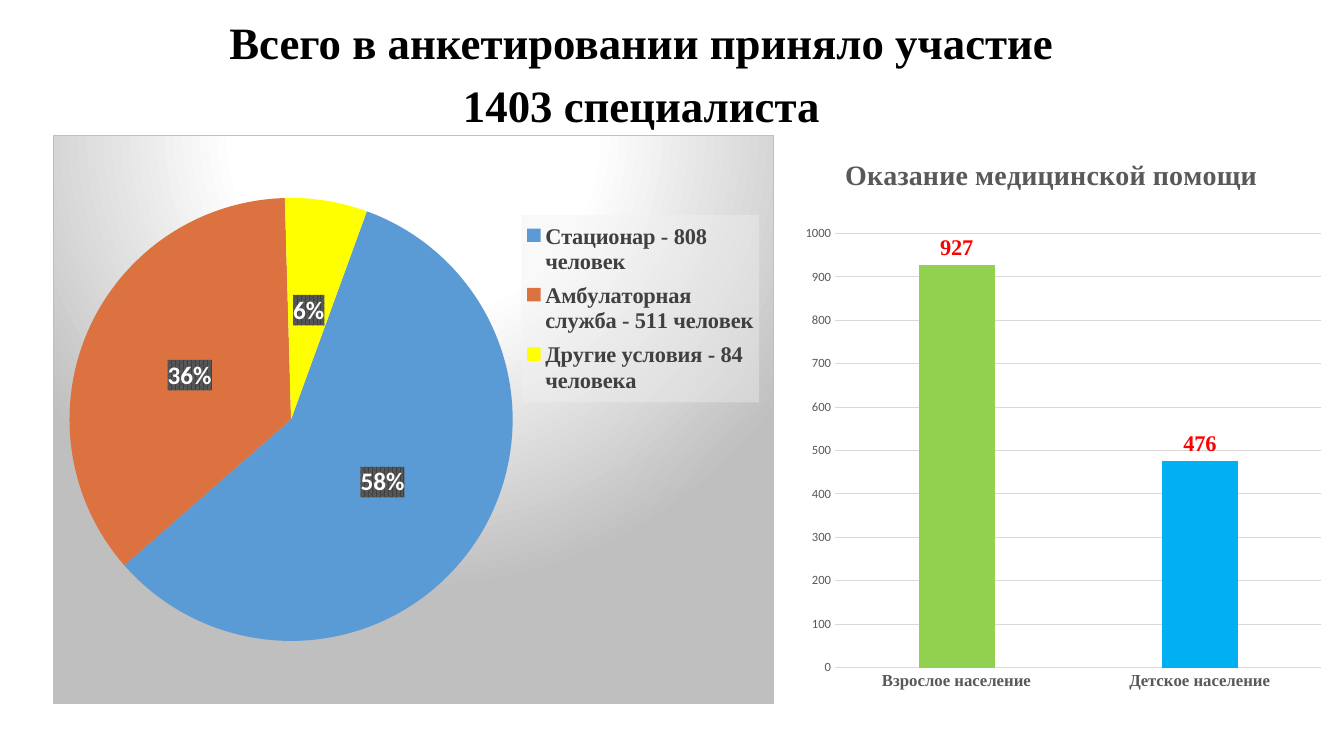
import pptx
import pptx.chart.data
import pptx.dml.color
import pptx.enum.chart
import pptx.enum.text
import pptx.oxml
import pptx.oxml.ns
import pptx.util

PX = 914400 / 100.8
SERIF = "Times New Roman"
NS = pptx.oxml.ns.nsdecls("a", "c")
NO_FRAME = "<a:noFill/><a:ln><a:noFill/></a:ln>"
PIE_FRAME = """<a:gradFill><a:gsLst>
<a:gs pos="0"><a:srgbClr val="FFFFFF"/></a:gs>
<a:gs pos="39000"><a:srgbClr val="FFFFFF"/></a:gs>
<a:gs pos="100000"><a:srgbClr val="BFBFBF"/></a:gs></a:gsLst>
<a:path path="circle"><a:fillToRect l="50000" t="-80000" r="50000" b="180000"/></a:path></a:gradFill>
<a:ln w="9525"><a:solidFill><a:srgbClr val="BFBFBF"/></a:solidFill></a:ln>"""
LABEL_FILL = """<a:pattFill prst="pct75"><a:fgClr><a:srgbClr val="404040"/></a:fgClr>
<a:bgClr><a:srgbClr val="595959"/></a:bgClr></a:pattFill>"""
LEGEND_FILL = """<a:solidFill><a:srgbClr val="F2F2F2">
<a:alpha val="39000"/></a:srgbClr></a:solidFill>"""


def px(n):
    return pptx.util.Emu(round(n * PX))


def rgb(value):
    return pptx.dml.color.RGBColor.from_string(value)


def set_font(font, size, color="000000", name=SERIF, bold=True):
    font.size, font.name, font.bold = pptx.util.Pt(size), name, bold
    font.color.rgb = rgb(color)


def set_fill(fill, color):
    fill.solid()
    fill.fore_color.rgb = rgb(color)


def set_line(line, color):
    line.color.rgb = rgb(color)
    line.width = pptx.util.Pt(0.75)


def add_sp_pr(parent, content):
    """Put shape properties just before the text properties of a chart part."""
    sp_pr = pptx.oxml.parse_xml(f"<c:spPr {NS}>{content}</c:spPr>")
    parent.find(pptx.oxml.ns.qn("c:txPr")).addprevious(sp_pr)


def make_layout(x, y, w, h, inner=False):
    """Manual layout in fractions of the chart's box."""
    target = '<c:layoutTarget val="inner"/>' if inner else ""
    return pptx.oxml.parse_xml(
        f'<c:layout {NS}><c:manualLayout>{target}<c:xMode val="edge"/><c:yMode val="edge"/>'
        f'<c:x val="{x}"/><c:y val="{y}"/><c:w val="{w}"/><c:h val="{h}"/>'
        "</c:manualLayout></c:layout>")


def add_chart(s, box, kind, values, colors, frame, plot_box):
    """Add a one-series chart with a colour for each point; values maps category to number."""
    data = pptx.chart.data.CategoryChartData()
    data.categories = list(values)
    data.add_series("Специалисты", list(values.values()))
    chart = s.shapes.add_chart(kind, *map(px, box), data).chart
    set_font(chart.font, 10, name="Calibri", bold=False)
    space = chart.element
    add_sp_pr(space, frame)
    if not space.xpath("c:roundedCorners"):
        space.xpath("c:chart")[0].addprevious(
            pptx.oxml.parse_xml(f'<c:roundedCorners {NS} val="0"/>'))
    area = space.xpath("c:chart/c:plotArea")[0]
    for old in area.xpath("c:layout"):
        area.remove(old)
    area.insert(0, make_layout(*plot_box, inner=True))
    for i, color in enumerate(colors):
        set_fill(chart.plots[0].series[0].points[i].format.fill, color)
    return chart


def add_heading(s, box, lines):
    sp = s.shapes.title
    sp.left, sp.top, sp.width, sp.height = map(px, box)
    tf = sp.text_frame
    tf.word_wrap = True
    tf.auto_size = pptx.enum.text.MSO_AUTO_SIZE.NONE
    tf.vertical_anchor = pptx.enum.text.MSO_ANCHOR.TOP
    for i, line in enumerate(lines):
        p = tf.add_paragraph() if i else tf.paragraphs[0]
        p.alignment = pptx.enum.text.PP_ALIGN.CENTER
        p.line_spacing = 0.9
        p.space_before = pptx.util.Pt(10)
        r = p.add_run()
        r.text = line
        set_font(r.font, 32)


def add_conditions_pie(s, box):
    values = {"Стационар - 808 человек": 58,
              "Амбулаторная служба - 511 человек": 36,
              "Другие условия - 84 человека": 6}
    chart = add_chart(s, box, pptx.enum.chart.XL_CHART_TYPE.PIE, values,
                      ["5B9BD5", "DC7240", "FFFF00"], PIE_FRAME, (0.02, 0.11, 0.62, 0.78))
    chart.has_title = False
    plot = chart.plots[0]
    plot.vary_by_categories = True
    pie = chart.element.xpath(".//c:pieChart")[0]
    for old in pie.xpath("c:firstSliceAng"):
        pie.remove(old)
    pie.append(pptx.oxml.parse_xml(f'<c:firstSliceAng {NS} val="20"/>'))

    labels = plot.series[0].data_labels
    set_font(labels.font, 18, "FFFFFF", "Calibri")
    labels.show_percentage, labels.show_value = True, False
    labels.number_format, labels.number_format_is_linked = "0%", False
    labels.position = pptx.enum.chart.XL_LABEL_POSITION.CENTER
    add_sp_pr(chart.element.xpath(".//c:ser/c:dLbls")[0], LABEL_FILL)

    chart.has_legend = True
    legend = chart.legend
    legend.position = pptx.enum.chart.XL_LEGEND_POSITION.RIGHT
    legend.include_in_layout = False
    set_font(legend.font, 16, "404040")
    element = chart.element.xpath(".//c:legend")[0]
    for old in element.xpath("c:layout"):
        element.remove(old)
    element.xpath("c:overlay")[0].addprevious(make_layout(0.65, 0.14, 0.33, 0.33))
    add_sp_pr(element, LEGEND_FILL)


def add_population_columns(s, box):
    values = {"Взрослое население": 927, "Детское население": 476}
    chart = add_chart(s, box, pptx.enum.chart.XL_CHART_TYPE.COLUMN_CLUSTERED, values,
                      ["92D050", "00B0F0"], NO_FRAME, (0.1, 0.17, 0.9, 0.75))
    chart.has_legend = False
    chart.has_title = True
    r = chart.chart_title.text_frame.paragraphs[0].add_run()
    r.text = "Оказание медицинской помощи"
    set_font(r.font, 20, "595959")

    plot = chart.plots[0]
    plot.vary_by_categories = False
    plot.gap_width = 219
    labels = plot.series[0].data_labels
    set_font(labels.font, 16, "FF0000")
    labels.show_value = True
    labels.position = pptx.enum.chart.XL_LABEL_POSITION.OUTSIDE_END

    category, value = chart.category_axis, chart.value_axis
    for axis in (category, value):
        axis.major_tick_mark = axis.minor_tick_mark = pptx.enum.chart.XL_TICK_MARK.NONE
    set_font(category.tick_labels.font, 12, "595959")
    set_line(category.format.line, "D9D9D9")
    set_font(value.tick_labels.font, 9, "595959", "Calibri", bold=False)
    value.format.line.fill.background()
    value.minimum_scale, value.maximum_scale, value.major_unit = 0, 1000, 100
    value.has_major_gridlines = True
    set_line(value.major_gridlines.format.line, "D9D9D9")


def main():
    prs = pptx.Presentation()
    prs.slide_width, prs.slide_height = px(1344), px(756)
    s = prs.slides.add_slide(prs.slide_layouts[5])
    add_heading(s, (14, 16, 1255, 579),
                ["Всего в анкетировании приняло участие", "1403 специалиста"])
    add_conditions_pie(s, (53, 135, 721, 569))
    add_population_columns(s, (781, 135, 541, 579))
    prs.save("out.pptx")


if __name__ == "__main__":
    main()
